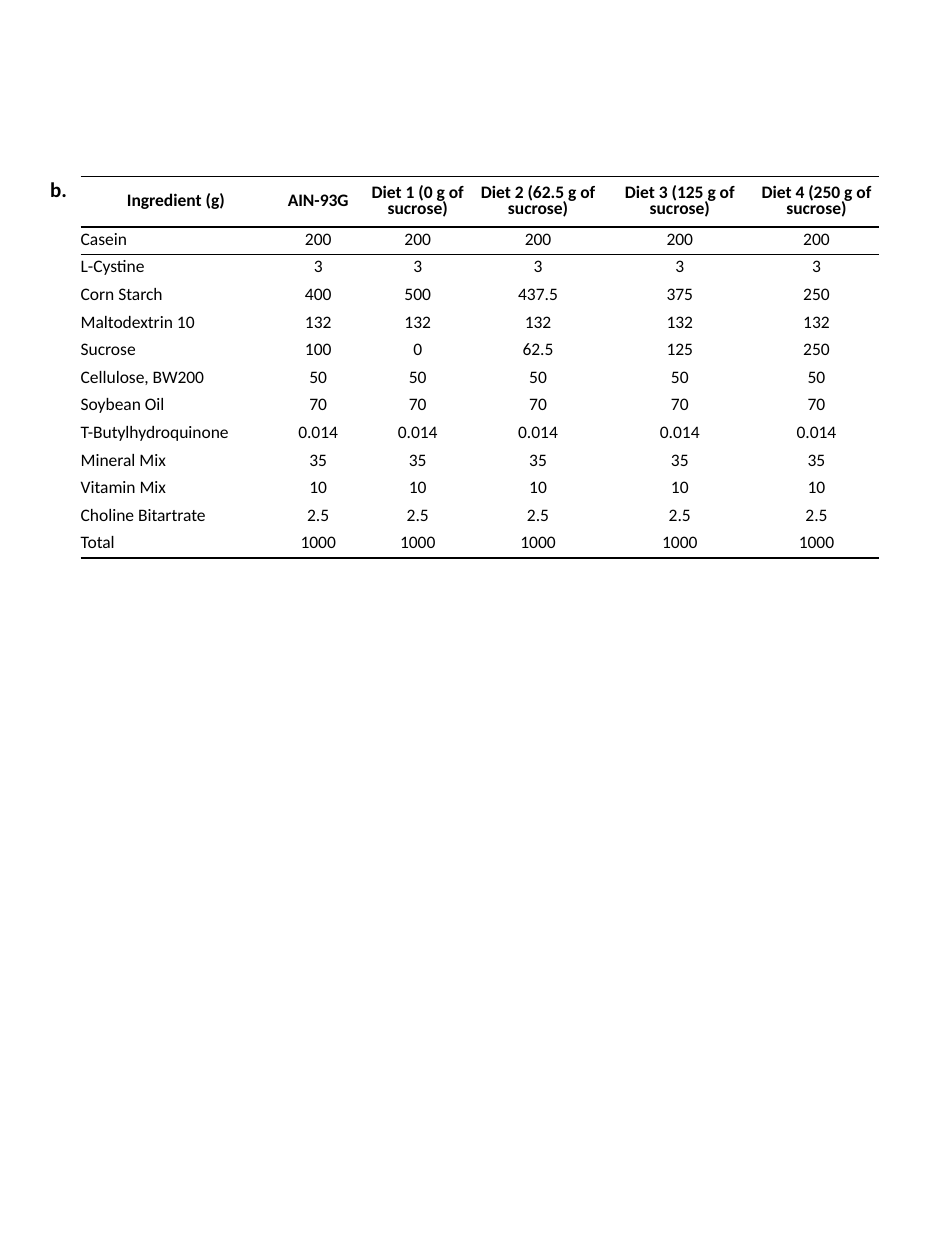
from lxml import etree
from pptx import Presentation
from pptx import util as u
from pptx.dml.color import RGBColor
from pptx.enum import text
from pptx.oxml import ns

NO_GRID_STYLE = "{2D5ABB26-0587-4C30-8999-92F81FD0307C}"
HEADINGS = ["Ingredient (g)", "AIN-93G"] + [
    f"Diet {number} ({grams} g of sucrose)"
    for number, grams in enumerate(["0", "62.5", "125", "250"], 1)
]
AMOUNTS = {
    "Casein": ["200"] * 5,
    "L-Cystine": ["3"] * 5,
    "Corn Starch": ["400", "500", "437.5", "375", "250"],
    "Maltodextrin 10": ["132"] * 5,
    "Sucrose": ["100", "0", "62.5", "125", "250"],
    "Cellulose, BW200": ["50"] * 5,
    "Soybean Oil": ["70"] * 5,
    "T-Butylhydroquinone": ["0.014"] * 5,
    "Mineral Mix": ["35"] * 5,
    "Vitamin Mix": ["10"] * 5,
    "Choline Bitartrate": ["2.5"] * 5,
    "Total": ["1000"] * 5,
}
COLUMN_WIDTHS = [1.51, 0.75, 0.83, 1.08, 1.17, 1]
HEADING_HEIGHT = 0.4
BODY_HEIGHT = 2.63


def color(value):
    return RGBColor.from_string(value)


def write(frame, words, size=10, bold=False, align=None, spacing=None,
          font="Calibri", ink="000000"):
    paragraph = frame.paragraphs[0]
    paragraph.alignment = align
    paragraph.line_spacing = spacing
    run = paragraph.add_run()
    run.text = words
    run.font.name = font
    run.font.size = u.Pt(size)
    run.font.bold = bold
    run.font.color.rgb = color(ink)


class DietSlide:
    ink = "000000"
    paper = "FFFFFF"
    rule_width = 1

    def __init__(self, deck):
        self.slide = deck.slides.add_slide(deck.slide_layouts[6])

    def label(self, words, left, top, width, height):
        frame = self.slide.shapes.add_textbox(
            *map(u.Inches, (left, top, width, height))).text_frame
        frame.word_wrap = False
        frame.auto_size = text.MSO_AUTO_SIZE.SHAPE_TO_FIT_TEXT
        write(frame, words, size=12, bold=True, ink=self.ink)

    def rule(self, cell, side, position):
        line = etree.Element(ns.qn(f"a:ln{side}"), w=str(u.Pt(self.rule_width)))
        fill = etree.SubElement(line, ns.qn("a:solidFill"))
        etree.SubElement(fill, ns.qn("a:srgbClr"), val=self.ink)
        cell._tc.get_or_add_tcPr().insert(position, line)

    def cell(self, cell, words, heading, centred, sides):
        cell.margin_left = cell.margin_right = 0
        cell.margin_top = cell.margin_bottom = 0
        cell.vertical_anchor = text.MSO_ANCHOR.MIDDLE
        if heading:
            cell.fill.solid()
            cell.fill.fore_color.rgb = color(self.paper)
        else:
            cell.fill.background()
        for position, side in enumerate(sides):
            self.rule(cell, side, position)
        write(cell.text_frame, words, bold=heading, spacing=0.75, ink=self.ink,
              align=text.PP_ALIGN.CENTER if centred else text.PP_ALIGN.LEFT)

    def table(self, rows, left, top):
        last = len(rows) - 1
        table = self.slide.shapes.add_table(
            len(rows), len(COLUMN_WIDTHS), u.Inches(left), u.Inches(top),
            u.Inches(sum(COLUMN_WIDTHS)),
            u.Inches(HEADING_HEIGHT + BODY_HEIGHT)).table
        table.horz_banding = False
        table._tbl.tblPr.find(ns.qn("a:tableStyleId")).text = NO_GRID_STYLE
        for column, width in zip(table.columns, COLUMN_WIDTHS):
            column.width = u.Inches(width)
        sides = {0: "TB", 1: "T", last: "B"}
        for r, values in enumerate(rows):
            table.rows[r].height = u.Inches(
                BODY_HEIGHT / last if r else HEADING_HEIGHT)
            for c, words in enumerate(values):
                self.cell(table.cell(r, c), words, heading=r == 0,
                          centred=r == 0 or c > 0, sides=sides.get(r, ""))


def main():
    deck = Presentation()
    deck.slide_width, deck.slide_height = u.Inches(7.5), u.Inches(10)
    diets = DietSlide(deck)
    ingredients = [[name, *grams] for name, grams in AMOUNTS.items()]
    diets.table([HEADINGS, *ingredients], 0.64, 1.4)
    diets.label("b.", 0.3, 1.35, 0.34, 0.3)
    deck.save("out.pptx")


if __name__ == "__main__":
    main()
